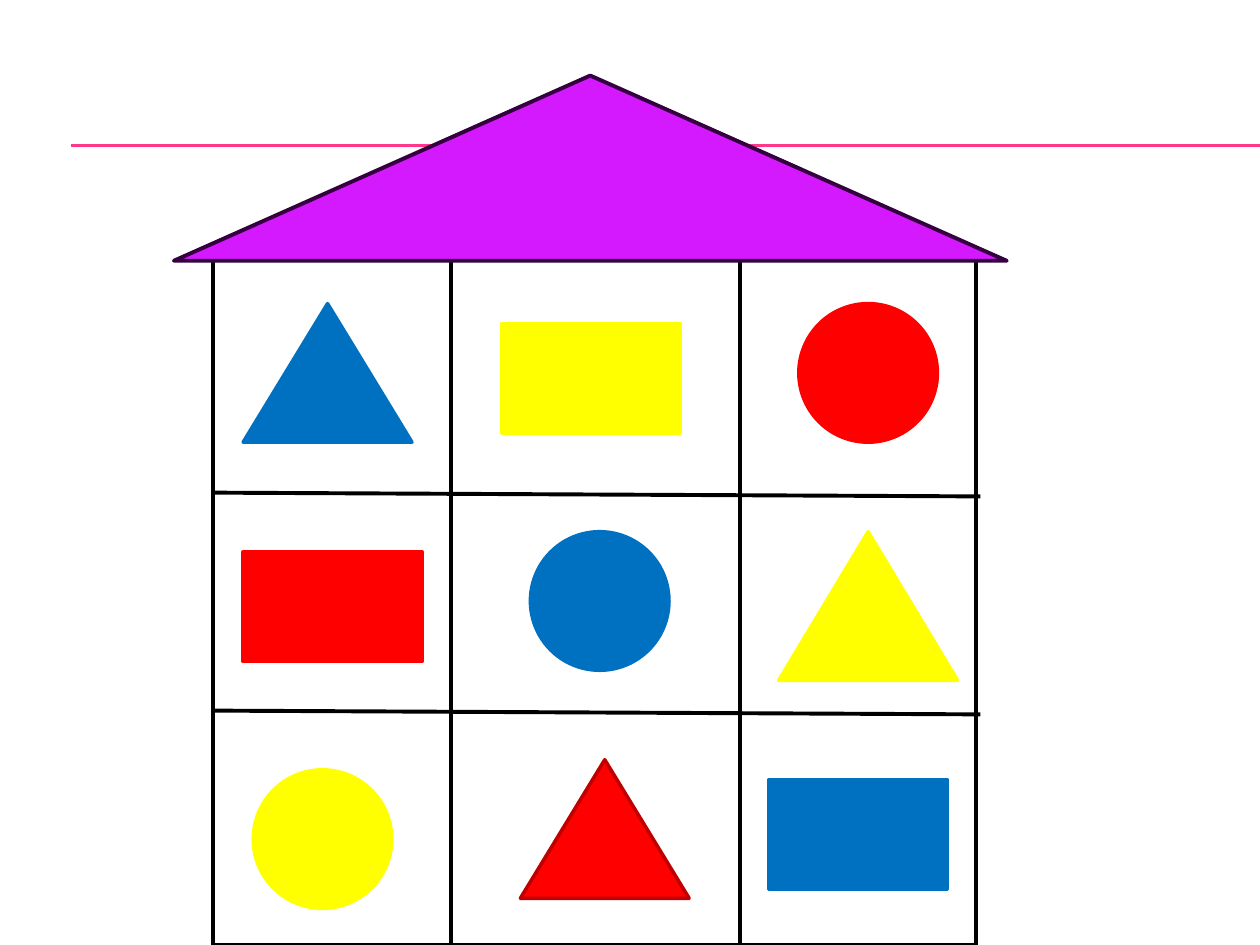
from lxml import etree
from pptx import Presentation, util as u
from pptx.dml.color import RGBColor
from pptx.enum import shapes
from pptx.oxml.ns import qn

BLACK = RGBColor(0x00, 0x00, 0x00)
WHITE = RGBColor(0xFF, 0xFF, 0xFF)
PINK = RGBColor(0xFF, 0x38, 0x8C)
PURPLE = RGBColor(0xD5, 0x19, 0xFF)
DARK_PURPLE = RGBColor(0x34, 0x00, 0x40)
BLUE = RGBColor(0x00, 0x70, 0xC0)
RED = RGBColor(0xFF, 0x00, 0x00)
DARK_RED = RGBColor(0xC0, 0x00, 0x00)
YELLOW = RGBColor(0xFF, 0xFF, 0x00)

RECT = shapes.MSO_SHAPE.RECTANGLE
OVAL = shapes.MSO_SHAPE.OVAL
TRIANGLE = shapes.MSO_SHAPE.ISOSCELES_TRIANGLE


class Canvas:
    """Holds the slide and its grid of 10 columns by 7.5 rows."""
    COLS, ROWS = 10, 7.5

    def __init__(self, prs):
        prs.slide_width, prs.slide_height = u.Inches(10), u.Inches(7.5)
        self.col = prs.slide_width / self.COLS
        self.row = prs.slide_height / self.ROWS
        self.s = prs.slides.add_slide(prs.slide_layouts[6])

    def grid(self, x, y):
        return round(x * self.col), round(y * self.row)

    def outline(self, sp, color, width):
        sp.line.color.rgb = color
        for name, value in {"width": u.Pt(width)}.items():
            setattr(sp.line, name, value)

    def shape(self, kind, x, y, w, h, fill, line=None, width=2):
        sp = self.s.shapes.add_shape(kind, *self.grid(x, y), *self.grid(w, h))
        sp.shadow.inherit = False
        sp.fill.solid()
        sp.fill.fore_color.rgb = fill
        self.outline(sp, line or fill, width)

    def line(self, x1, y1, x2, y2, color=BLACK, width=2.25):
        sp = self.s.shapes.add_connector(
            shapes.MSO_CONNECTOR.STRAIGHT, *self.grid(x1, y1), *self.grid(x2, y2))
        self.outline(sp, color, width)
        etree.SubElement(sp._element.spPr, qn("a:effectLst"))


def main():
    prs = Presentation()
    c = Canvas(prs)
    left, top, bottom = 1.69, 2.03, c.ROWS

    # Double rule behind the roof
    for y in (1.15, 1.16):
        c.line(0.56, y, c.COLS, y, PINK, 0.75)

    # House: walls, columns, roof, floors
    c.shape(RECT, left, top, 6.06, bottom - top, WHITE, BLACK, 2.25)
    for x in (3.58, 5.87):
        c.line(x, top, x, bottom)
    c.shape(TRIANGLE, 1.38, 0.6, 6.61, 1.47, PURPLE, DARK_PURPLE, 2.25)
    for y in (3.91, 5.64):
        c.line(left, y, 7.78, y + 0.03)

    # Figures in the rooms: each kind has one size, unless given
    sizes = {TRIANGLE: (1.34, 1.1), OVAL: (1.1, 1.1), RECT: (1.42, 0.87)}
    c.shape(TRIANGLE, 6.18, 4.22, 1.42, 1.18, YELLOW)
    for kind, x, y, fill, line in (
        (TRIANGLE, 1.93, 2.41, BLUE, BLUE),
        (TRIANGLE, 4.13, 6.03, RED, DARK_RED),
        (OVAL, 6.34, 2.41, RED, RED),
        (OVAL, 4.21, 4.22, BLUE, BLUE),
        (OVAL, 2.01, 6.11, YELLOW, YELLOW),
        (RECT, 1.93, 4.38, RED, RED),
        (RECT, 3.98, 2.57, YELLOW, YELLOW),
        (RECT, 6.1, 6.19, BLUE, BLUE),
    ):
        c.shape(kind, x, y, *sizes[kind], fill, line)

    prs.save("out.pptx")


if __name__ == "__main__":
    main()
